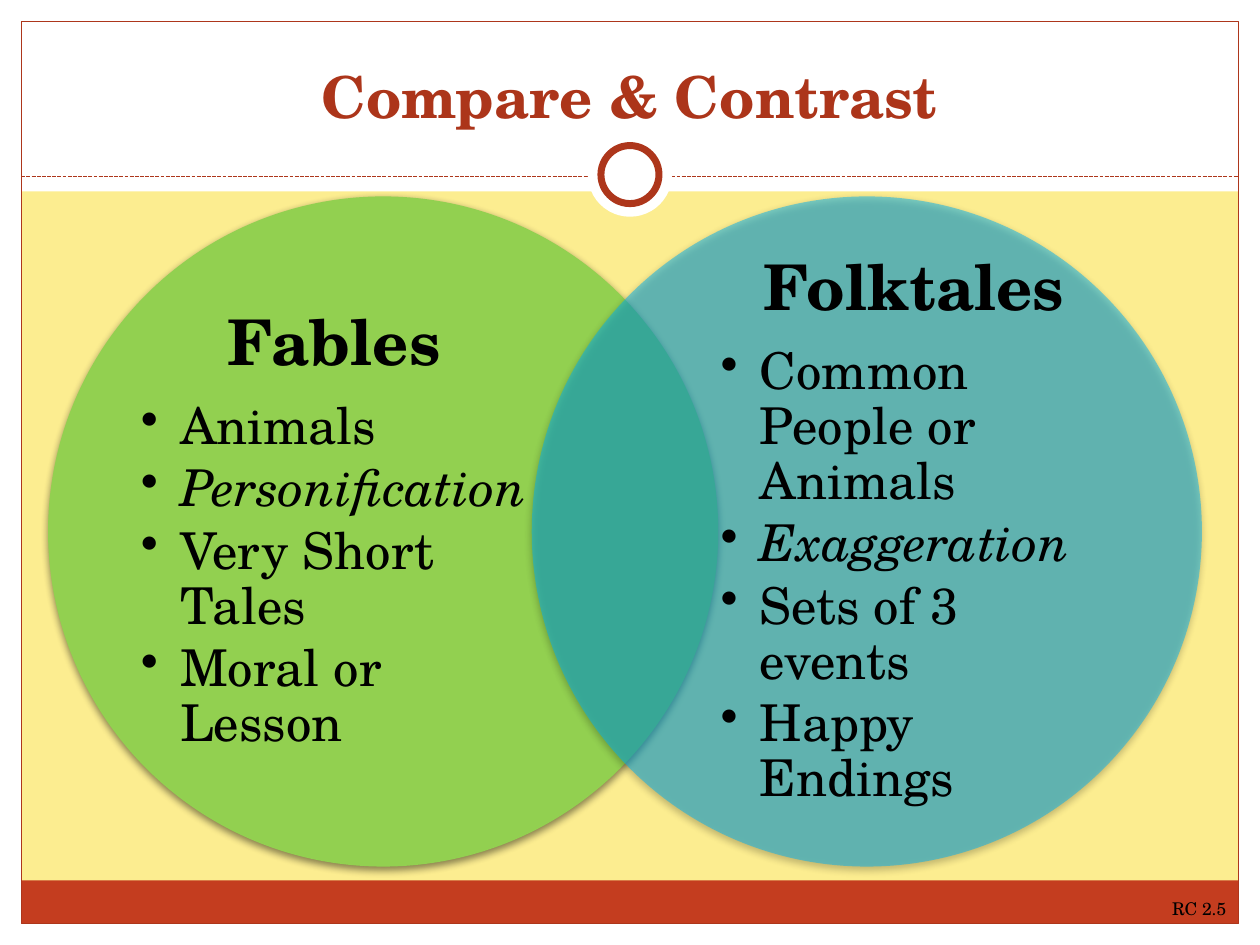
from dataclasses import dataclass

from lxml.etree import SubElement
from pptx import Presentation
from pptx.dml.color import RGBColor
from pptx.enum.dml import MSO_LINE
from pptx.enum.shapes import MSO_CONNECTOR, MSO_SHAPE
from pptx.enum.text import MSO_ANCHOR, MSO_AUTO_SIZE, PP_ALIGN
from pptx.oxml.ns import qn
from pptx.util import Cm, Pt

FONT = "TeX Gyre Schola"
WHITE, BLACK, RED = "FFFFFF", "000000", "AD361B"
WIDTH, HEIGHT, MARGIN = 25.4, 19.05, 0.43
INNER_WIDTH = WIDTH - 2 * MARGIN
CIRCLE_SIZE, CIRCLE_TOP = 13.51, 3.96
BULLET_INDENT = 0.79


@dataclass
class Box:
    left: float
    top: float
    width: float
    height: float

    def lengths(self) -> list:
        return [Cm(value) for value in (self.left, self.top, self.width, self.height)]


@dataclass
class Topic:
    heading: str
    items: list[str]
    italic_item: str
    circle_left: float
    text_left: float
    color: str
    opacity: int


TOPICS = [
    Topic("Fables", ["Animals", "Personification", "Very Short Tales", "Moral or Lesson"],
          "Personification", 0.97, 2.84, "92D050", 100),
    Topic("Folktales", ["Common People or Animals", "Exaggeration", "Sets of 3 events", "Happy Endings"],
          "Exaggeration", 10.72, 14.53, "00B0F0", 50),
]


def rgb(color: str) -> RGBColor:
    return RGBColor.from_string(color)


def add_shape(slide, kind, box: Box, fill: str | None, line: str | None = None, weight: float = 0.75):
    shape = slide.shapes.add_shape(kind, *box.lengths())
    shape.shadow.inherit = False
    if fill:
        shape.fill.solid()
        shape.fill.fore_color.rgb = rgb(fill)
    else:
        shape.fill.background()
    if line:
        shape.line.color.rgb = rgb(line)
        shape.line.width = Pt(weight)
    else:
        shape.line.fill.background()
    return shape


def add_disc(slide, center_y: float, size: float, line: str | None = None) -> None:
    box = Box((WIDTH - size) / 2, center_y - size / 2, size, size)
    add_shape(slide, MSO_SHAPE.OVAL, box, WHITE, line, 4)


def style_font(paragraph, size: float, color: str, bold: bool = False, italic: bool = False) -> None:
    font = paragraph.font
    font.name, font.size = FONT, Pt(size)
    font.bold, font.italic = bold, italic
    font.color.rgb = rgb(color)


def add_bullet(paragraph) -> None:
    properties = paragraph._p.get_or_add_pPr()
    properties.set("marL", str(Cm(BULLET_INDENT)))
    properties.set("indent", str(-Cm(BULLET_INDENT)))
    SubElement(properties, qn("a:buChar"), char="•")


def add_soft_shadow(shape) -> None:
    effects = shape._element.spPr.find(qn("a:effectLst"))
    shadow = SubElement(effects, qn("a:outerShdw"), blurRad=str(Pt(4)), dist=str(Pt(2)),
                        dir="5400000", rotWithShape="0")
    color = SubElement(shadow, qn("a:srgbClr"), val=BLACK)
    SubElement(color, qn("a:alpha"), val="45000")


def set_opacity(shape, percent: int) -> None:
    color = shape._element.spPr.find(qn("a:solidFill")).find(qn("a:srgbClr"))
    SubElement(color, qn("a:alpha"), val=str(percent * 1000))


def draw_frame(slide) -> None:
    for box in (
        Box(0, HEIGHT - MARGIN, WIDTH, MARGIN),
        Box(0, 0, WIDTH, 3.86),
        Box(0, 0, MARGIN, HEIGHT),
        Box(WIDTH - MARGIN, 0, MARGIN, HEIGHT),
    ):
        add_shape(slide, MSO_SHAPE.RECTANGLE, box, WHITE)
    add_shape(slide, MSO_SHAPE.RECTANGLE, Box(MARGIN, 17.75, INNER_WIDTH, 0.87), "C43D1F")
    add_shape(slide, MSO_SHAPE.RECTANGLE, Box(MARGIN, MARGIN, INNER_WIDTH, HEIGHT - 2 * MARGIN), None, RED)
    divider = slide.shapes.add_connector(
        MSO_CONNECTOR.STRAIGHT, Cm(MARGIN), Cm(3.56), Cm(WIDTH - MARGIN), Cm(3.56))
    divider.line.color.rgb = rgb(RED)
    divider.line.width = Pt(0.75)
    divider.line.dash_style = MSO_LINE.SQUARE_DOT
    SubElement(divider._element.spPr, qn("a:effectLst"))
    add_disc(slide, 3.52, 1.7)
    add_disc(slide, 3.52, 1.17, RED)


def draw_title(slide, text: str) -> None:
    title = slide.shapes.title
    title.left, title.top, title.width, title.height = Box(0.84, 0.64, 23.7, 2.11).lengths()
    frame = title.text_frame
    frame.text = text
    frame.auto_size = MSO_AUTO_SIZE.NONE
    frame.vertical_anchor = MSO_ANCHOR.BOTTOM
    paragraph = frame.paragraphs[0]
    paragraph.alignment = PP_ALIGN.CENTER
    style_font(paragraph, 33, "AC351A", bold=True)
    title._element.getparent().append(title._element)


def draw_topic(slide, topic: Topic) -> None:
    circle = add_shape(slide, MSO_SHAPE.OVAL,
                       Box(topic.circle_left, CIRCLE_TOP, CIRCLE_SIZE, CIRCLE_SIZE), topic.color)
    add_soft_shadow(circle)
    if topic.opacity < 100:
        set_opacity(circle, topic.opacity)

    frame = slide.shapes.add_textbox(*Box(topic.text_left, 5.56, 7.8, 10.31).lengths()).text_frame
    frame.word_wrap = True
    frame.vertical_anchor = MSO_ANCHOR.MIDDLE
    frame.margin_left = frame.margin_right = frame.margin_top = frame.margin_bottom = 0
    heading = frame.paragraphs[0]
    heading.text = topic.heading
    heading.alignment = PP_ALIGN.CENTER
    heading.line_spacing, heading.space_after = 0.9, Pt(12.6)
    style_font(heading, 36, BLACK, bold=True)
    for item in topic.items:
        paragraph = frame.add_paragraph()
        paragraph.text = item
        paragraph.level = 1
        paragraph.alignment = PP_ALIGN.LEFT
        paragraph.line_spacing, paragraph.space_after = 0.9, Pt(4.35)
        add_bullet(paragraph)
        style_font(paragraph, 29, BLACK, italic=item == topic.italic_item)


def draw_code(slide, text: str) -> None:
    frame = slide.shapes.add_textbox(*Box(20.52, 17.98, 4.45, 0.69).lengths()).text_frame
    frame.word_wrap = True
    frame.auto_size = MSO_AUTO_SIZE.SHAPE_TO_FIT_TEXT
    paragraph = frame.paragraphs[0]
    paragraph.text = text
    paragraph.alignment = PP_ALIGN.RIGHT
    style_font(paragraph, 10, BLACK)


def main() -> None:
    presentation = Presentation()
    presentation.slide_width, presentation.slide_height = Cm(WIDTH), Cm(HEIGHT)
    slide = presentation.slides.add_slide(presentation.slide_layouts[5])
    slide.background.fill.solid()
    slide.background.fill.fore_color.rgb = rgb("FCED90")
    draw_frame(slide)
    draw_title(slide, "Compare & Contrast")
    for topic in TOPICS:
        draw_topic(slide, topic)
    draw_code(slide, "RC 2.5")
    presentation.save("out.pptx")


if __name__ == "__main__":
    main()
